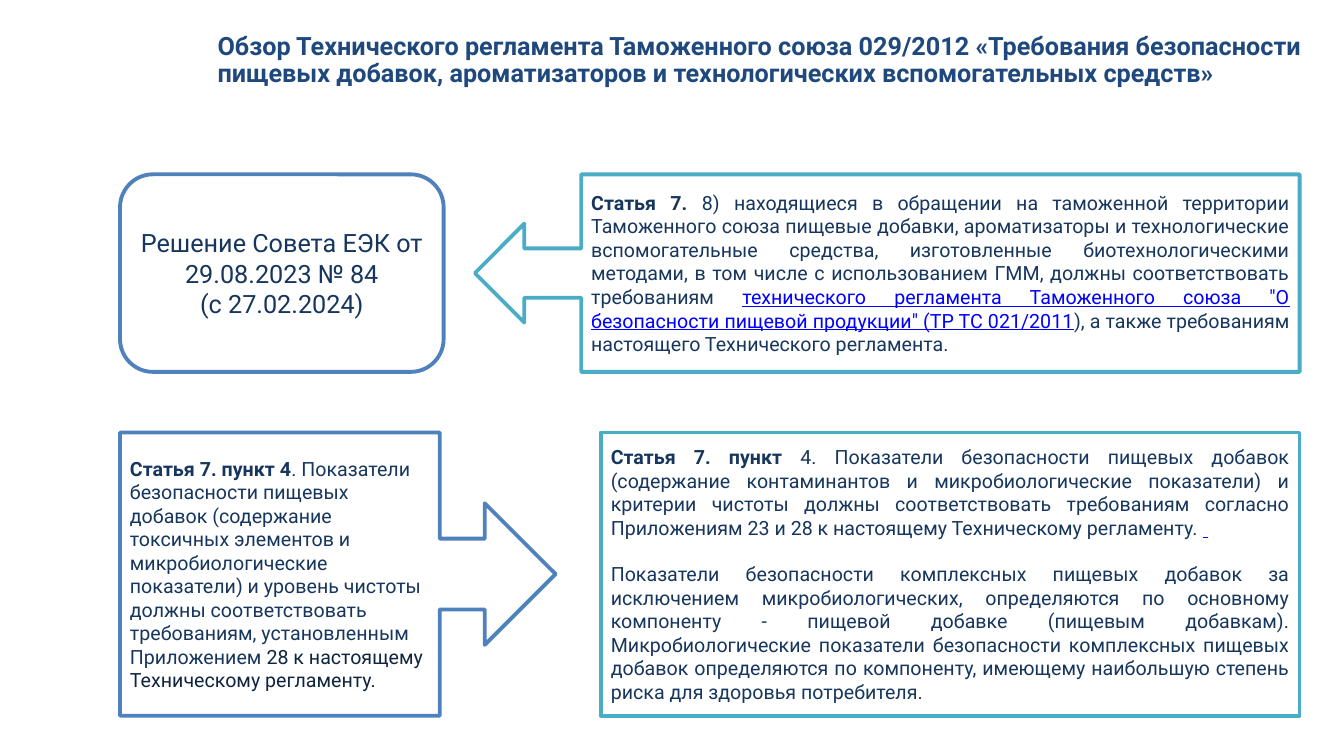
from pptx import Presentation
from pptx.dml.color import RGBColor
from pptx.enum.shapes import MSO_SHAPE as Shape
from pptx.enum.text import MSO_ANCHOR as Anchor, PP_ALIGN as Align
from pptx.util import Inches, Pt

COLORS = {"white": "FFFFFF", "title": "1F497D", "text": "17365D", "dark": "0F243E",
          "link": "0000FF", "blue": "4F81BD", "teal": "4BACC6"}
FONT = "Roboto"

# Content: a paragraph is a list of (text, style) runs
TITLE = [[("Обзор Технического регламента Таможенного союза 029/2012 «Требования безопасности "
           "пищевых добавок, ароматизаторов и технологических вспомогательных средств»", "title")]]
DECISION = [[("Решение Совета ЕЭК от 29.08.2023 № 84", "text")],
            [("(с 27.02.2024)", "text")]]
BIOTECH = [[
    ("Статья 7. ", "bold"),
    ("8) находящиеся в обращении на таможенной территории Таможенного союза пищевые добавки, "
     "ароматизаторы и технологические вспомогательные средства, изготовленные "
     "биотехнологическими методами, в том числе с использованием ГММ, должны "
     "соответствовать требованиям ", "text"),
    ("технического регламента Таможенного союза \"О безопасности пищевой продукции\" "
     "(ТР ТС 021/2011", "link"),
    ("), а также требованиям настоящего Технического регламента.", "text")]]
OLD_TEXT = [[
    ("Статья 7. пункт 4", "bold"),
    (". Показатели безопасности пищевых добавок (содержание токсичных элементов и "
     "микробиологические показатели) и уровень чистоты должны соответствовать требованиям, "
     "установленным Приложением ", "text"),
    ("28 к настоящему Техническому регламенту.", "dark")]]
NEW_TEXT = [
    [("Статья 7. пункт ", "bold"),
     ("4. Показатели безопасности пищевых добавок (содержание контаминантов и "
      "микробиологические показатели) и критерии чистоты должны соответствовать требованиям "
      "согласно Приложениям 23 и 28 к настоящему Техническому регламенту. ", "text"),
     (" ", "link")],
    [("Показатели безопасности комплексных пищевых добавок за исключением "
      "микробиологических, определяются по основному компоненту - пищевой добавке (пищевым "
      "добавкам). Микробиологические показатели безопасности комплексных пищевых добавок "
      "определяются по компоненту, имеющему наибольшую степень риска для здоровья "
      "потребителя.", "text")]]

# Run styles: color, bold, underline
STYLES = {"title": ("title", True, False), "bold": ("text", True, False),
          "text": ("text", False, False), "dark": ("dark", False, False),
          "link": ("link", False, True)}

# Grid: outer edges and two rows (top, height), in inches
LEFT, RIGHT = 1.19, 12.89
ROWS = [(1.73, 1.96), (4.29, 2.81)]

# Boxes: preset, row, left, right, line, size, alignment, gap, body share, paragraphs
BOXES = [
    (Shape.ROUNDED_RECTANGLE, 0, LEFT, 4.4, "blue", 18, Align.CENTER, 0, None, DECISION),
    (Shape.LEFT_ARROW_CALLOUT, 0, 4.71, RIGHT, "teal", 14, Align.JUSTIFY, 0, 0.871, BIOTECH),
    (Shape.RIGHT_ARROW_CALLOUT, 1, LEFT, 5.51, "blue", 14, Align.LEFT, 0, 0.734, OLD_TEXT),
    (Shape.RECTANGLE, 1, 5.96, RIGHT, "teal", 14, Align.JUSTIFY, 16.5, None, NEW_TEXT),
]


def rgb(name):
    return RGBColor.from_string(COLORS[name])


def write(tf, paragraphs, size, align, gap=0, spacing=None):
    tf.word_wrap = True
    for i, runs in enumerate(paragraphs):
        p = tf.paragraphs[0] if i == 0 else tf.add_paragraph()
        p.alignment = align
        p.font.name, p.font.size = FONT, Pt(size)
        if spacing:
            p.line_spacing = spacing
        if i and gap:
            p.space_before = Pt(gap)
        for text, style in runs:
            color, bold, underline = STYLES[style]
            r = p.add_run()
            r.text = text
            r.font.color.rgb = rgb(color)
            r.font.bold, r.font.underline = bold, underline


prs = Presentation()
prs.slide_width, prs.slide_height = Inches(13.33), Inches(7.5)
s = prs.slides.add_slide(prs.slide_layouts[6])

# Title
title = s.shapes.add_textbox(Inches(2.06), Inches(0.29), Inches(11.04), Inches(0.83))
write(title.text_frame, TITLE, 18, Align.LEFT, spacing=0.89)

# Boxes and arrow callouts
for preset, row, left, right, line, size, align, gap, body, paragraphs in BOXES:
    top, height = ROWS[row]
    sp = s.shapes.add_shape(preset, Inches(left), Inches(top), Inches(right - left), Inches(height))
    sp.shadow.inherit = False
    if body:
        for i, value in enumerate((0.25, 0.25, 0.25, body)):
            sp.adjustments[i] = value
    sp.fill.solid()
    sp.fill.fore_color.rgb = rgb("white")
    sp.line.color.rgb = rgb(line)
    sp.line.width = Pt(2.75)
    sp.text_frame.vertical_anchor = Anchor.MIDDLE
    write(sp.text_frame, paragraphs, size, align, gap)

prs.save("out.pptx")
